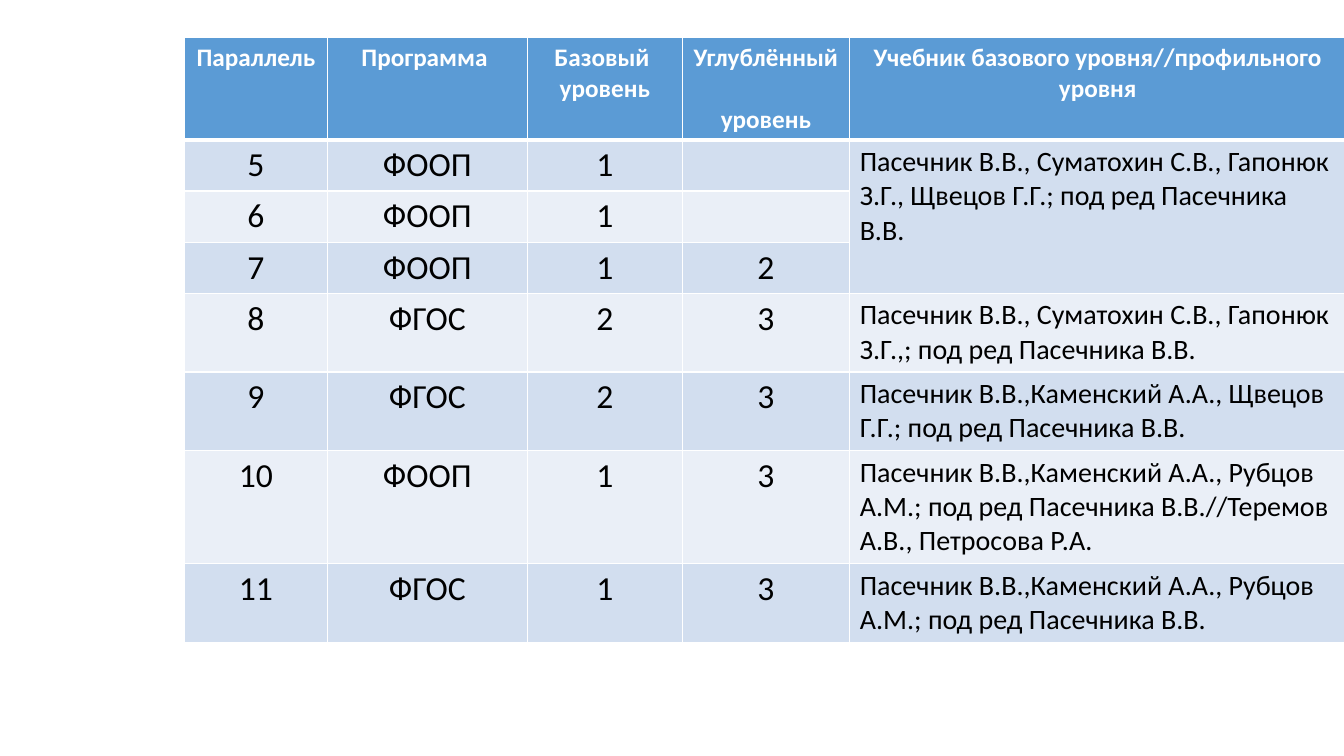
from dataclasses import dataclass

from lxml.etree import SubElement
from pptx import Presentation
from pptx.dml.color import RGBColor
from pptx.enum.text import PP_ALIGN
from pptx.oxml.ns import qn
from pptx.util import Pt

HEADERS = ["Параллель ", "Программа ", "Базовый \vуровень", "Углублённый \vуровень",
           "Учебник базового уровня//профильного уровня"]
CLASSES = [
    ("5", "ФООП", "1", "", "Пасечник В.В., Суматохин С.В., Гапонюк З.Г., Щвецов Г.Г.; "
                           "под ред Пасечника В.В."),
    ("6", "ФООП", "1", "", ""),
    ("7", "ФООП", "1", "2", ""),
    ("8", "ФГОС", "2", "3", "Пасечник В.В., Суматохин С.В., Гапонюк З.Г.,; "
                            "под ред Пасечника В.В."),
    ("9", "ФГОС", "2", "3", "Пасечник В.В.,Каменский А.А., Щвецов Г.Г.; "
                            "под ред Пасечника В.В."),
    ("10", "ФООП", "1", "3", "Пасечник В.В.,Каменский А.А., Рубцов А.М.; "
                             "под ред Пасечника В.В.//Теремов А.В., Петросова Р.А."),
    ("11", "ФГОС", "1", "3", "Пасечник В.В.,Каменский А.А., Рубцов А.М.; "
                             "под ред Пасечника В.В."),
]
SHARED_BOOK_ROWS = (1, 3)
COLUMN_WIDTHS = [101.7, 143.2, 110.4, 119.7, 354.4]
ROW_HEIGHTS = [55.4, 30.2, 30.2, 33.1, 30.2, 30.2, 30.2, 30.2]
TABLE_LEFT, TABLE_TOP, TABLE_HEIGHT = 132, 26.8, 408.2


@dataclass(frozen=True)
class Theme:
    font: str = "Calibri"
    header_fill: str = "5B9BD5"
    bands: tuple = ("D2DEEF", "EAEFF7")
    header_text: str = "FFFFFF"
    body_text: str = "000000"
    border: str = "FFFFFF"
    header_size: int = 18
    class_size: int = 24
    book_size: int = 20
    thin: int = 1
    thick: int = 3


THEME = Theme()


def set_borders(cell, top, bottom):
    properties = cell._tc.get_or_add_tcPr()
    widths = {"a:lnL": THEME.thin, "a:lnR": THEME.thin, "a:lnT": top, "a:lnB": bottom}
    for tag, width in widths.items():
        line = SubElement(properties, qn(tag), w=str(Pt(width)))
        fill = SubElement(line, qn("a:solidFill"))
        SubElement(fill, qn("a:srgbClr"), val=THEME.border)


def fill_cell(cell, text, row, column):
    header = row == 0
    book = not header and column == len(HEADERS) - 1
    set_borders(cell, THEME.thick if row == 1 else THEME.thin,
                THEME.thick if header else THEME.thin)
    cell.fill.solid()
    cell.fill.fore_color.rgb = RGBColor.from_string(
        THEME.header_fill if header else THEME.bands[(row - 1) % 2])
    if not text:
        return
    cell.text_frame.text = text
    para = cell.text_frame.paragraphs[0]
    para.alignment = PP_ALIGN.LEFT if book else PP_ALIGN.CENTER
    size = THEME.header_size if header else THEME.book_size if book else THEME.class_size
    for span in para.runs:
        span.font.name = THEME.font
        span.font.size = Pt(size)
        span.font.bold = header
        span.font.color.rgb = RGBColor.from_string(
            THEME.header_text if header else THEME.body_text)


def add_class_table(page):
    rows = [HEADERS, *CLASSES]
    frame = page.shapes.add_table(len(rows), len(HEADERS), Pt(TABLE_LEFT), Pt(TABLE_TOP),
                                  Pt(sum(COLUMN_WIDTHS)), Pt(TABLE_HEIGHT))
    table = frame.table
    for column, width in zip(table.columns, COLUMN_WIDTHS):
        column.width = Pt(width)
    for row, height in zip(table.rows, ROW_HEIGHTS):
        row.height = Pt(height)
    frame.height = Pt(TABLE_HEIGHT)
    for row, texts in enumerate(rows):
        for column, text in enumerate(texts):
            fill_cell(table.cell(row, column), text, row, column)
    first, last = SHARED_BOOK_ROWS
    book_column = len(HEADERS) - 1
    table.cell(first, book_column).merge(table.cell(last, book_column))


def main():
    deck = Presentation()
    deck.slide_width, deck.slide_height = Pt(960), Pt(540)
    page = deck.slides.add_slide(deck.slide_layouts[6])
    add_class_table(page)
    deck.save("out.pptx")


if __name__ == "__main__":
    main()
